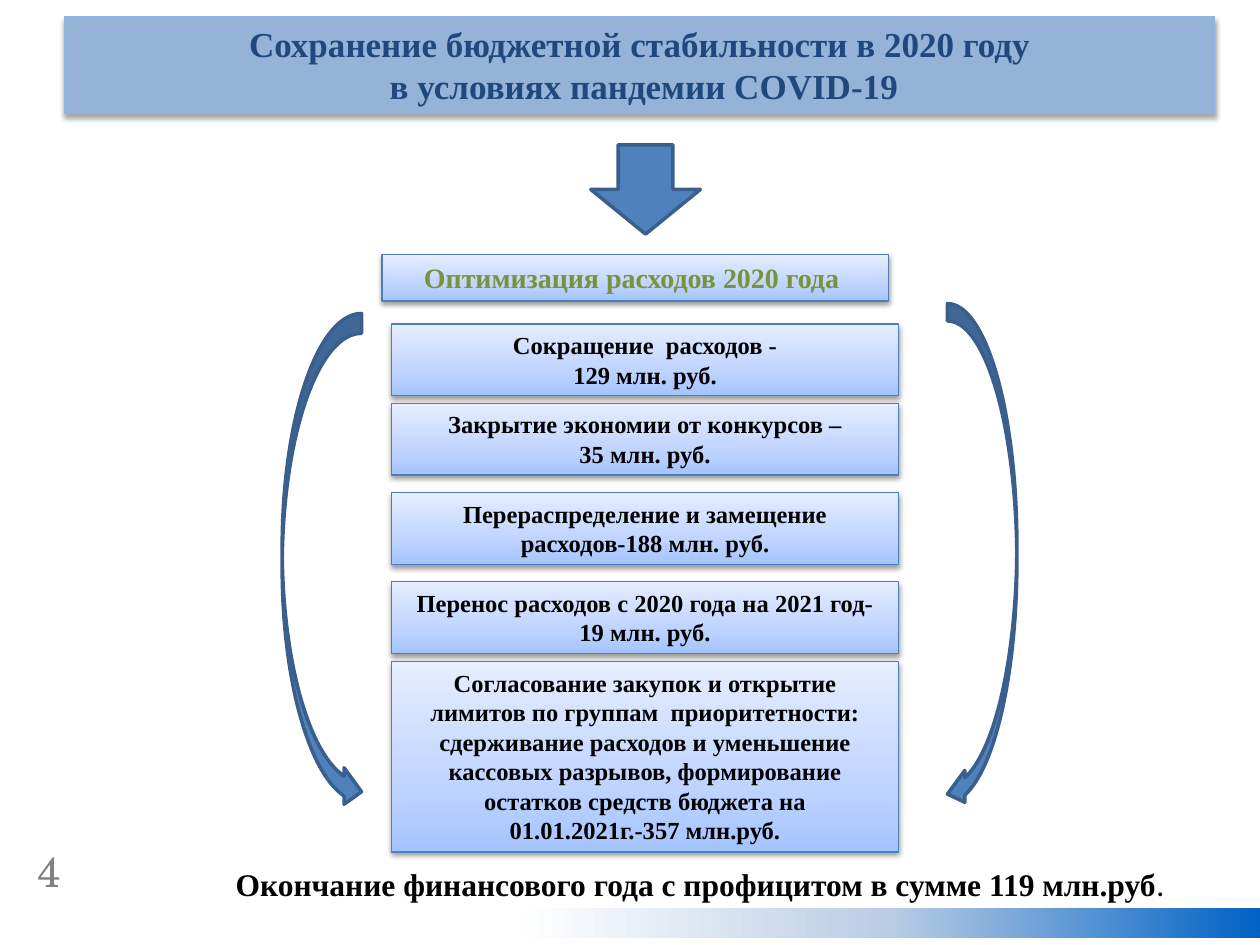
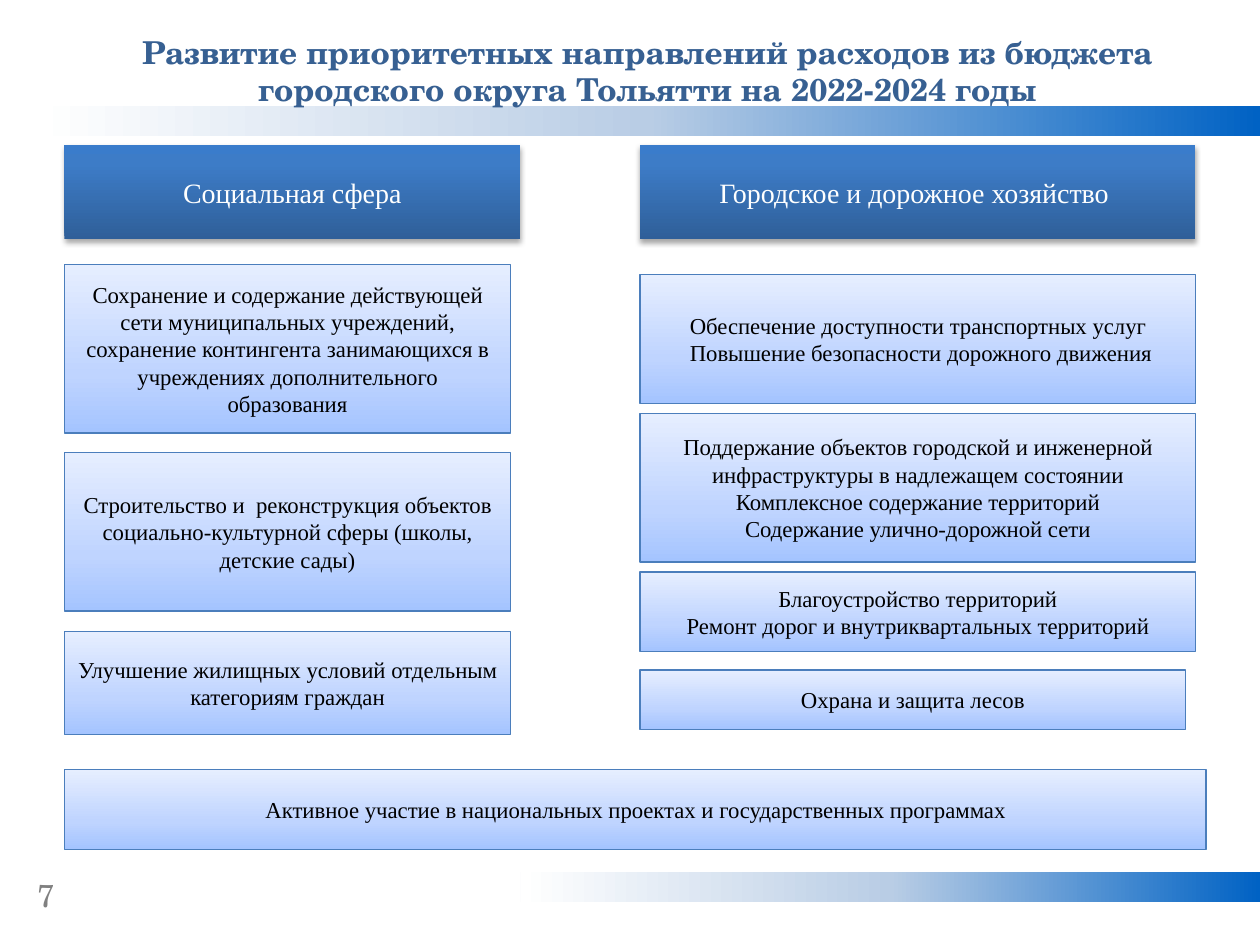
from dataclasses import dataclass
from typing import Optional

from lxml import etree
from pptx import Presentation
from pptx.dml.color import RGBColor
from pptx.enum.shapes import MSO_SHAPE
from pptx.enum.text import MSO_ANCHOR, MSO_AUTO_SIZE, PP_ALIGN
from pptx.oxml.ns import qn
from pptx.util import Cm, Pt

RECT, ROUNDED = MSO_SHAPE.RECTANGLE, MSO_SHAPE.ROUNDED_RECTANGLE
CURVED, DOWN = MSO_SHAPE.CURVED_LEFT_ARROW, MSO_SHAPE.DOWN_ARROW
TOP, MIDDLE = MSO_ANCHOR.TOP, MSO_ANCHOR.MIDDLE
LEFT, CENTER = PP_ALIGN.LEFT, PP_ALIGN.CENTER
NO_FIT, GROW = MSO_AUTO_SIZE.NONE, MSO_AUTO_SIZE.SHAPE_TO_FIT_TEXT

SERIF, SCHOLA, SANS = "Times New Roman", "TeX Gyre Schola", "Calibri"
BOX_LINE, ARROW_FILL, ARROW_LINE = "4B7EBC", "4F81BD", "3A5F8C"
BAND_STOPS = ((0, "0062C4"), (50, "B9CDE5"), (100, "FFFFFF"))
BOX_STOPS = ((0, "A4C4FF"), (35, "BFD4FF"), (100, "E6EEFF"))
HEADER_STOPS = ((0, "2F5F99"), (80, "3D7CC7"), (100, "3A7CCB"))
UPWARD, LEFTWARD = 90, 180
MARGIN = 1.3


@dataclass(frozen=True)
class Style:
    size: float
    color: str = "000000"
    bold: bool = False
    font: str = SERIF


@dataclass(frozen=True)
class Area:
    """Position and size in centimetres."""
    left: float
    top: float
    width: float
    height: float

    def lengths(self) -> tuple:
        return Cm(self.left), Cm(self.top), Cm(self.width), Cm(self.height)


@dataclass(frozen=True)
class Box:
    area: Area
    lines: tuple
    style: Style
    kind: int = RECT
    stops: tuple = BOX_STOPS
    line: Optional[str] = BOX_LINE
    shadow: Optional[tuple] = None  # opacity in percent, distance in points
    anchor: int = TOP
    inset: bool = True


@dataclass(frozen=True)
class Arrow:
    area: Area
    kind: int
    adjustments: tuple = ()
    flipped: bool = False


SOFT_SHADOW, DEEP_SHADOW = (38, 1.6), (35, 1.8)
MEASURE = Style(14, bold=True)
MEASURE_HEAD = Style(16, "77933C", True)
RESULT = Style(18, bold=True)
SPHERE = Style(16, "FFFFFF")
DIRECTION = Style(13)
COVID_TITLE = Style(20, "1F497D", True)
SPENDING_TITLE = Style(18, "376092", True, SCHOLA)


def rgb(color: str) -> RGBColor:
    return RGBColor.from_string(color)


def add_run(p, text: str, style: Style) -> None:
    r = p.add_run()
    r.text = text
    r.font.size = Pt(style.size)
    r.font.name = style.font
    r.font.bold = style.bold
    r.font.color.rgb = rgb(style.color)


def write(tf, lines: tuple, style: Style, align: int = CENTER,
          anchor: int = TOP) -> None:
    tf.word_wrap = True
    tf.vertical_anchor = anchor
    for i, line in enumerate(lines):
        p = tf.add_paragraph() if i else tf.paragraphs[0]
        p.alignment = align
        add_run(p, line, style)


def set_line(sp, color: Optional[str], width: float) -> None:
    if color is None:
        sp.line.fill.background()
        return
    sp.line.color.rgb = rgb(color)
    sp.line.width = Pt(width)


def set_gradient(sp, stops: tuple, angle: int) -> None:
    sp.fill.gradient()
    sp.fill.gradient_angle = angle
    stop_list = sp._element.spPr.find(qn("a:gradFill")).find(qn("a:gsLst"))
    for old in list(stop_list):
        stop_list.remove(old)
    for position, color in stops:
        stop = etree.SubElement(stop_list, qn("a:gs"), pos=str(position * 1000))
        etree.SubElement(stop, qn("a:srgbClr"), val=color)


def set_shadow(sp, shadow: Optional[tuple]) -> None:
    """Drop the theme shadow and, if asked, cast one straight down."""
    sp.shadow.inherit = False
    if shadow is None:
        return
    opacity, distance = shadow
    effects = sp._element.spPr.find(qn("a:effectLst"))
    outer = etree.SubElement(
        effects, qn("a:outerShdw"), blurRad=str(int(Pt(3.1))),
        dist=str(int(Pt(distance))), dir="5400000", rotWithShape="0")
    color = etree.SubElement(outer, qn("a:srgbClr"), val="000000")
    etree.SubElement(color, qn("a:alpha"), val=str(opacity * 1000))


def add_box(slide, box: Box) -> None:
    sp = slide.shapes.add_shape(box.kind, *box.area.lengths())
    if box.kind == ROUNDED:
        sp.adjustments[0] = 0
    set_gradient(sp, box.stops, UPWARD)
    set_line(sp, box.line, 0.75)
    set_shadow(sp, box.shadow)
    tf = sp.text_frame
    if not box.inset:
        tf.margin_left = tf.margin_right = tf.margin_top = tf.margin_bottom = 0
    write(tf, box.lines, box.style, anchor=box.anchor)


def add_arrow(slide, arrow: Arrow) -> None:
    sp = slide.shapes.add_shape(arrow.kind, *arrow.area.lengths())
    for i, value in enumerate(arrow.adjustments):
        sp.adjustments[i] = value
    if arrow.flipped:
        sp._element.spPr.find(qn("a:xfrm")).set("flipH", "1")
    sp.fill.solid()
    sp.fill.fore_color.rgb = rgb(ARROW_FILL)
    set_line(sp, ARROW_LINE, 2)
    set_shadow(sp, None)


def add_band(slide, left: float, top: float) -> None:
    """Put a band that runs to the right edge behind everything else."""
    sp = slide.shapes.add_shape(RECT, *Area(left, top, 25.4 - left, 0.61).lengths())
    set_gradient(sp, BAND_STOPS, LEFTWARD)
    set_line(sp, None, 0)
    set_shadow(sp, None)
    slide.shapes._spTree.insert(2, sp._element)


def add_number(slide, number: str, area: Area, size: float) -> None:
    sp = slide.shapes.add_textbox(*area.lengths())
    write(sp.text_frame, (number,), Style(size, "808080", font=SCHOLA), LEFT)


def set_title(slide, area: Area, lines: tuple, style: Style):
    sp = slide.shapes.title
    sp.left, sp.top, sp.width, sp.height = area.lengths()
    sp.text_frame.auto_size = NO_FIT
    write(sp.text_frame, lines, style)
    return sp


def build_stability_slide(prs) -> None:
    slide = prs.slides.add_slide(prs.slide_layouts[5])
    add_band(slide, 10.49, 18.31)
    add_number(slide, "4", Area(0.5, 16.92, 1.98, 1.27), 24)
    title = set_title(slide, Area(MARGIN, 0.33, 23.19, 1.96), (
        "Сохранение бюджетной стабильности в 2020 году",
        " в условиях пандемии COVID-19"), COVID_TITLE)
    title.fill.solid()
    title.fill.fore_color.rgb = rgb("95B3D7")
    set_line(title, "8EB4E3", 0.75)
    set_shadow(title, DEEP_SHADOW)

    add_box(slide, Box(Area(7.7, 5.13, 10.21, 0.94),
                       ("Оптимизация расходов 2020 года ",),
                       MEASURE_HEAD, shadow=SOFT_SHADOW))
    measures = (
        (6.53, 1.45, ("Сокращение  расходов -", "129 млн. руб.")),
        (8.13, 1.45, ("Закрытие экономии от конкурсов –", "35 млн. руб.")),
        (9.93, 1.45, ("Перераспределение и замещение расходов-188 млн. руб.",)),
        (11.73, 1.45, ("Перенос расходов с 2020 года на 2021 год-",
                       "19 млн. руб.")),
        (13.34, 3.84, ("Согласование закупок и открытие лимитов по группам  "
                       "приоритетности: сдерживание расходов и уменьшение "
                       "кассовых разрывов, формирование остатков средств "
                       "бюджета на 01.01.2021г.-357 млн.руб.",)),
    )
    for top, height, lines in measures:
        add_box(slide, Box(Area(7.9, top, 10.21, height), lines, MEASURE,
                           shadow=SOFT_SHADOW))

    for arrow in (
        Arrow(Area(19.1, 6.12, 1.4, 10.21), CURVED, (0.25, 0.46, 0.25)),
        Arrow(Area(5.69, 6.32, 1.6, 10.01), CURVED, (0.25, 0.46, 0.22), True),
        Arrow(Area(11.91, 2.92, 2.21, 1.8), DOWN),
    ):
        add_arrow(slide, arrow)

    tf = slide.shapes.add_textbox(*Area(4.5, 17.32, 19.43, 1.02).lengths()).text_frame
    write(tf, ("Окончание финансового года с профицитом в сумме 119 млн.руб",),
          RESULT, LEFT)
    add_run(tf.paragraphs[0], ".", Style(18, font=SANS))
    tf.word_wrap = False
    tf.auto_size = GROW


def build_priorities_slide(prs) -> None:
    slide = prs.slides.add_slide(prs.slide_layouts[5])
    add_band(slide, 0.71, 2.13)
    add_band(slide, 10.49, 17.58)
    add_number(slide, "7", Area(0.5, 17.53, 1, 1.02), 18)
    set_title(slide, Area(1.7, 0.53, 22.71, 1.8), (
        "Развитие приоритетных направлений расходов из бюджета "
        "городского округа Тольятти на 2022-2024 годы",), SPENDING_TITLE)

    right = 12.9
    for left, width, name in ((MARGIN, 9.19, "Социальная сфера"),
                              (right, 11.2, "Городское и дорожное хозяйство ")):
        add_box(slide, Box(Area(left, 2.92, width, 1.9), (name,), SPHERE, ROUNDED,
                           HEADER_STOPS, None, DEEP_SHADOW, MIDDLE))

    directions = (
        (Area(MARGIN, 5.33, 8.99, 3.4), (
            "Сохранение и содержание действующей сети муниципальных учреждений, "
            "сохранение контингента занимающихся в учреждениях дополнительного "
            "образования",)),
        (Area(MARGIN, 9.12, 8.99, 3.2), (
            "Строительство и  реконструкция объектов социально-культурной сферы "
            "(школы, детские сады)",)),
        (Area(MARGIN, 12.73, 8.99, 2.08), (
            "Улучшение жилищных условий отдельным категориям граждан",)),
        (Area(right, 5.54, 11.2, 2.59), (
            "Обеспечение доступности транспортных услуг",
            " Повышение безопасности дорожного движения")),
        (Area(right, 8.33, 11.2, 3), (
            "Поддержание объектов городской и инженерной инфраструктуры "
            "в надлежащем состоянии",
            "Комплексное содержание территорий",
            "Содержание улично-дорожной сети")),
        (Area(right, 11.53, 11.2, 1.6), (
            "Благоустройство территорий",
            "Ремонт дорог и внутриквартальных территорий")),
        (Area(right, 13.51, 11, 1.19), ("Охрана и защита лесов",)),
        (Area(MARGIN, 15.52, 23.01, 1.6), (
            "Активное участие в национальных проектах "
            "и государственных программах",)),
    )
    for area, lines in directions:
        add_box(slide, Box(area, lines, DIRECTION, ROUNDED, anchor=MIDDLE,
                           inset=area.left == MARGIN))


def main() -> None:
    prs = Presentation()
    prs.slide_width, prs.slide_height = Cm(25.4), Cm(19.05)
    build_stability_slide(prs)
    build_priorities_slide(prs)
    prs.save("out.pptx")


if __name__ == "__main__":
    main()
